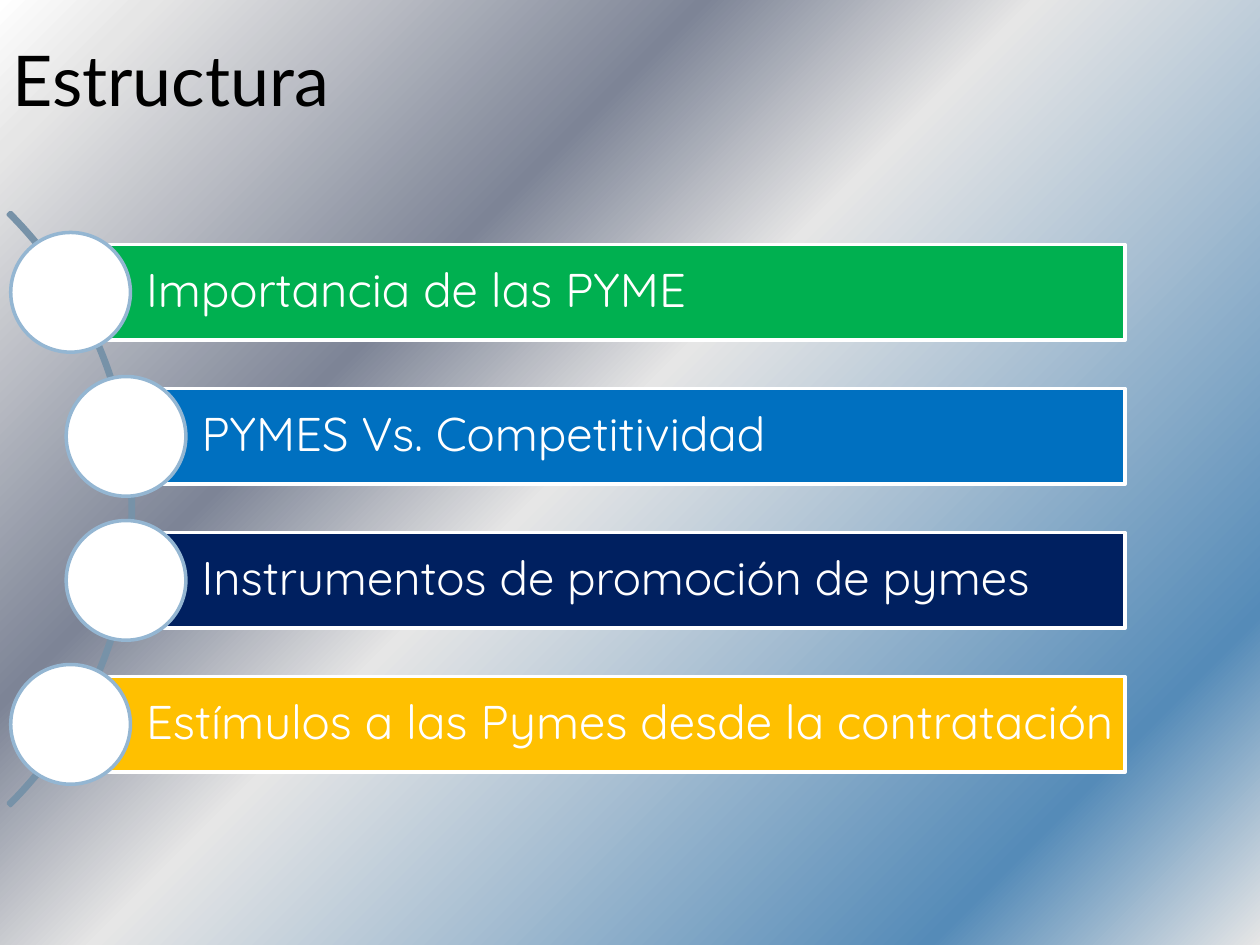
from lxml import etree
from pptx import Presentation
from pptx.dml.color import RGBColor
from pptx.enum.shapes import MSO_SHAPE
from pptx.enum.text import MSO_ANCHOR, PP_ALIGN
from pptx.oxml.ns import qn
from pptx.util import Inches, Pt

RECTANGLE, OVAL, BLOCK_ARC = MSO_SHAPE.RECTANGLE, MSO_SHAPE.OVAL, MSO_SHAPE.BLOCK_ARC
MIDDLE = MSO_ANCHOR.MIDDLE
LEFT = PP_ALIGN.LEFT

WHITE = "FFFFFF"
BACKGROUND_STOPS = [(0, WHITE), (7, "E6E6E6"), (32, "7D8496"),
                    (47, "E6E6E6"), (85, "558BB8"), (100, "E6E6E6")]

# Topic, bar colour, left edge of the bar
TOPICS = [
    ("Importancia de las PYME", "00B050", 0.56),
    ("PYMES Vs. Competitividad", "0070C0", 1),
    ("Instrumentos de promoción de pymes", "002060", 1),
    ("Estímulos a las Pymes desde la contratación", "FFC000", 0.56),
]
BAR_TOP, BAR_HEIGHT, BAR_RIGHT = 1.94, 0.76, 8.93
ROW_PITCH = 1.143
CIRCLE_SIZE = 0.95


def rgb(hex_color):
    return RGBColor.from_string(hex_color)


def set_background(slide):
    fill = slide.background.fill
    fill.gradient()
    fill.gradient_angle = 315
    stop_list = slide._element.find(".//" + qn("a:gsLst"))
    for stop in list(stop_list):
        stop_list.remove(stop)
    for percent, color in BACKGROUND_STOPS:
        stop = etree.SubElement(stop_list, qn("a:gs"), pos=str(percent * 1000))
        etree.SubElement(stop, qn("a:srgbClr"), val=color)


def write_text(shape, text, font_name, size, color):
    frame = shape.text_frame
    frame.text = text
    frame.word_wrap = True
    frame.vertical_anchor = MIDDLE
    paragraph = frame.paragraphs[0]
    paragraph.alignment = LEFT
    font = paragraph.runs[0].font
    font.name, font.size = font_name, Pt(size)
    font.color.rgb = rgb(color)


def add_title(slide, text):
    title = slide.shapes.add_textbox(0, 0, Inches(9), Inches(1.25))
    write_text(title, text, "Lato", 40, "000000")


def add_outlined(slide, preset, left, top, width, height, line, fill=None):
    shape = slide.shapes.add_shape(
        preset, Inches(left), Inches(top), Inches(width), Inches(height))
    shape.shadow.inherit = False
    shape.line.color.rgb = rgb(line)
    shape.line.width = Pt(2)
    if fill:
        shape.fill.solid()
        shape.fill.fore_color.rgb = rgb(fill)
    else:
        shape.fill.background()
    return shape


def add_arc(slide):
    arc = add_outlined(slide, BLOCK_ARC, -5.6, 0.71, 6.66, 6.66, "7792A8")
    # Start angle, end angle, thickness
    for index, value in enumerate((189, 27, 0.004)):
        arc.adjustments[index] = value


def add_topic(slide, row, text, color, left):
    top = BAR_TOP + row * ROW_PITCH
    bar = add_outlined(slide, RECTANGLE, left, top, BAR_RIGHT - left,
                       BAR_HEIGHT, WHITE, color)
    write_text(bar, text, "Quicksand", 27, WHITE)
    frame = bar.text_frame
    frame.margin_left = Inches(0.6)
    frame.margin_right = frame.margin_top = frame.margin_bottom = Inches(0.07)
    frame.paragraphs[0].line_spacing = 0.9

    # Circle centred on the left edge of the bar
    add_outlined(slide, OVAL, left - CIRCLE_SIZE / 2,
                 top + (BAR_HEIGHT - CIRCLE_SIZE) / 2,
                 CIRCLE_SIZE, CIRCLE_SIZE, "94B6D2", WHITE)


def main():
    prs = Presentation()
    prs.slide_width, prs.slide_height = Inches(10), Inches(7.5)
    slide = prs.slides.add_slide(prs.slide_layouts[6])
    set_background(slide)
    add_title(slide, "Estructura")
    add_arc(slide)
    for row, topic in enumerate(TOPICS):
        add_topic(slide, row, *topic)
    prs.save("out.pptx")


if __name__ == "__main__":
    main()
